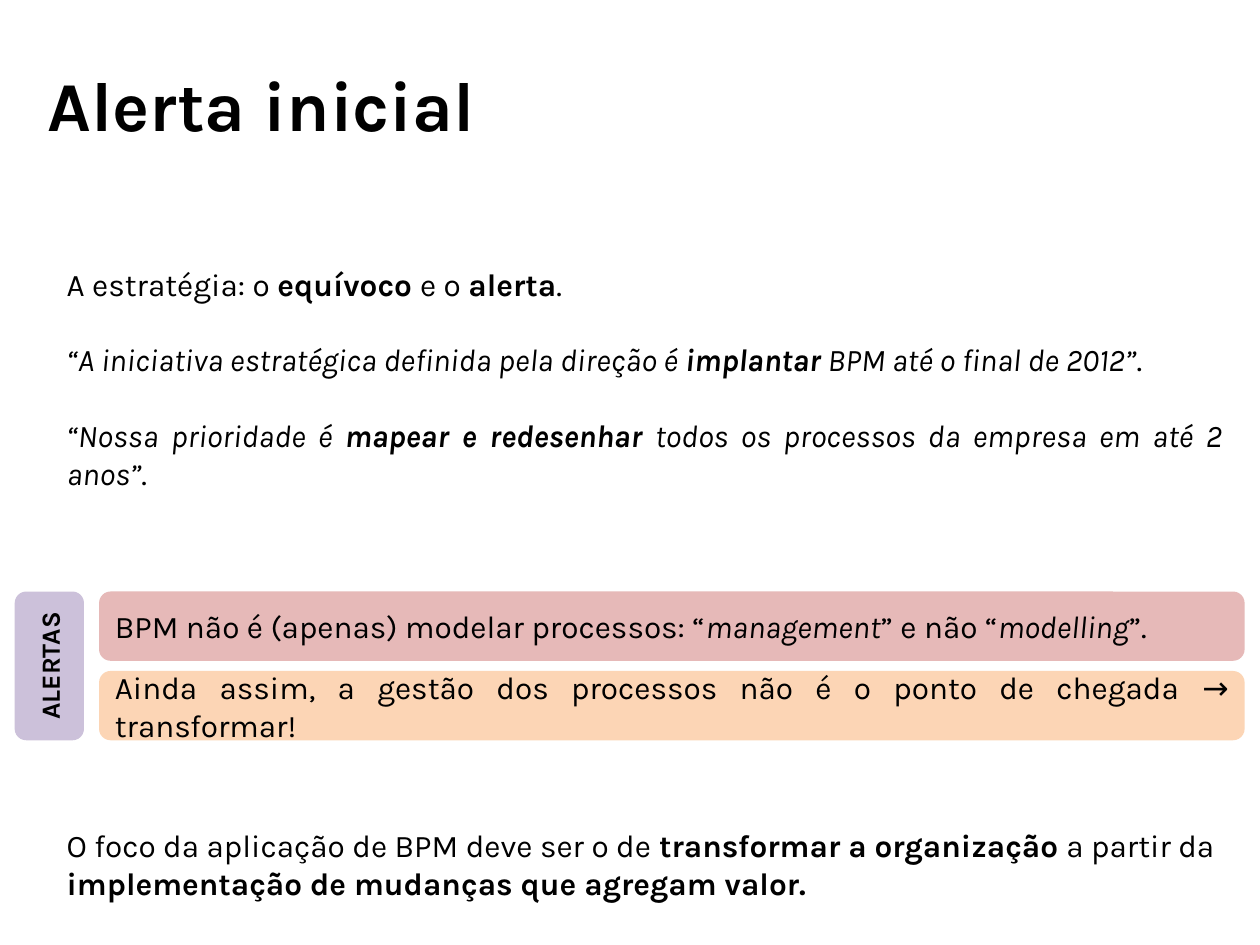
"""Builds the "Alerta inicial" slide about the focus of BPM."""
from pptx import Presentation
from pptx.dml.color import RGBColor
from pptx.enum.shapes import MSO_SHAPE
from pptx.enum.text import MSO_ANCHOR, MSO_AUTO_SIZE, PP_ALIGN
from pptx.util import Pt

BLACK = RGBColor(0x00, 0x00, 0x00)
ROSE = RGBColor(0xE6, 0xB9, 0xB8)
PEACH = RGBColor(0xFC, 0xD5, 0xB5)
LILAC = RGBColor(0xCC, 0xC1, 0xDA)

PLAIN, BOLD, ITALIC, BOLD_ITALIC = "", "b", "i", "bi"


class SlideBuilder:
    """Holds the text style and the current slide."""

    def __init__(self, slide, font="Karla", size=18, color=BLACK):
        self.slide = slide
        self.font = font
        self.size = size
        self.color = color

    def fill_text(self, frame, paragraphs, align, anchor, size=None, gap=0):
        """Fills a text frame with paragraphs of (text, style) runs."""
        frame.word_wrap = True
        frame.auto_size = MSO_AUTO_SIZE.NONE
        frame.vertical_anchor = anchor
        for index, parts in enumerate(paragraphs):
            paragraph = frame.add_paragraph() if index else frame.paragraphs[0]
            paragraph.alignment = align
            paragraph.space_before = Pt(gap if index else 0)
            for text, style in parts:
                run = paragraph.add_run()
                run.text = text
                run.font.name = self.font
                run.font.size = Pt(size or self.size)
                run.font.color.rgb = self.color
                run.font.bold = "b" in style
                run.font.italic = "i" in style

    def title(self, text, left, top, width, height, size):
        """Places and fills the title placeholder."""
        heading = self.slide.shapes.title
        heading.left, heading.top = Pt(left), Pt(top)
        heading.width, heading.height = Pt(width), Pt(height)
        self.fill_text(heading.text_frame, [[(text, BOLD)]], PP_ALIGN.LEFT,
                       MSO_ANCHOR.MIDDLE, size)

    def text(self, paragraphs, left, top, width, height,
             align=PP_ALIGN.LEFT, anchor=MSO_ANCHOR.TOP, gap=0):
        """Adds a text box."""
        box = self.slide.shapes.add_textbox(Pt(left), Pt(top), Pt(width), Pt(height))
        self.fill_text(box.text_frame, paragraphs, align, anchor, gap=gap)

    def panel(self, parts, left, top, width, height, fill,
              align=PP_ALIGN.JUSTIFY, size=None, rotation=0):
        """Adds a rounded, borderless panel with one paragraph."""
        panel = self.slide.shapes.add_shape(
            MSO_SHAPE.ROUNDED_RECTANGLE, Pt(left), Pt(top), Pt(width), Pt(height))
        panel.shadow.inherit = False
        panel.fill.solid()
        panel.fill.fore_color.rgb = fill
        panel.line.fill.background()
        panel.rotation = rotation
        self.fill_text(panel.text_frame, [parts], align, MSO_ANCHOR.MIDDLE, size)


def main():
    """Builds and saves the presentation."""
    deck = Presentation()
    deck.slide_width, deck.slide_height = Pt(720), Pt(540)
    builder = SlideBuilder(deck.slides.add_slide(deck.slide_layouts[5]))

    builder.title("Alerta inicial", 20.2, 1.4, 699.8, 116, 40)

    strategy = [
        [("A estratégia: o ", PLAIN), ("equívoco ", BOLD), ("e o ", PLAIN),
         ("alerta", BOLD), (".", PLAIN)],
        [("“A iniciativa estratégica definida pela direção é ", ITALIC),
         ("implantar", BOLD_ITALIC), (" BPM até o final de 2012”", ITALIC), (". ", PLAIN)],
        [("“Nossa prioridade é ", ITALIC), ("mapear e redesenhar ", BOLD_ITALIC),
         ("todos os processos da empresa em até 2 anos”", ITALIC), (".", PLAIN)],
    ]
    builder.text(strategy, 31, 122.4, 674.6, 187.2, PP_ALIGN.JUSTIFY, MSO_ANCHOR.MIDDLE, gap=21.6)

    alerts = [
        ([("BPM não é (apenas) modelar processos: “", PLAIN), ("management", ITALIC),
          ("” e não “", PLAIN), ("modelling", ITALIC), ("”.", PLAIN)], ROSE),
        ([("Ainda assim, a gestão dos processos não é o ponto de chegada → transformar!",
           PLAIN)], PEACH),
    ]
    alerts_top, alert_height, alert_pitch = 338, 39.6, 45.4
    for row, (parts, fill) in enumerate(alerts):
        builder.panel(parts, 56.6, alerts_top + row * alert_pitch, 654.6, alert_height, fill)

    label_length = alert_pitch + alert_height
    label_center = 28.2
    builder.panel([("ALERTAS", BOLD)], label_center - label_length / 2,
                  alerts_top + (label_length - alert_height) / 2,
                  label_length, alert_height, LILAC, PP_ALIGN.CENTER, 15, 270)

    focus = [[("O foco da aplicação de BPM deve ser o de ", PLAIN),
              ("transformar a organização ", BOLD), ("a partir da ", PLAIN),
              ("implementação de mudanças que agregam valor.", BOLD)]]
    builder.text(focus, 31, 468.7, 689, 51.1)

    deck.save("out.pptx")


if __name__ == "__main__":
    main()
